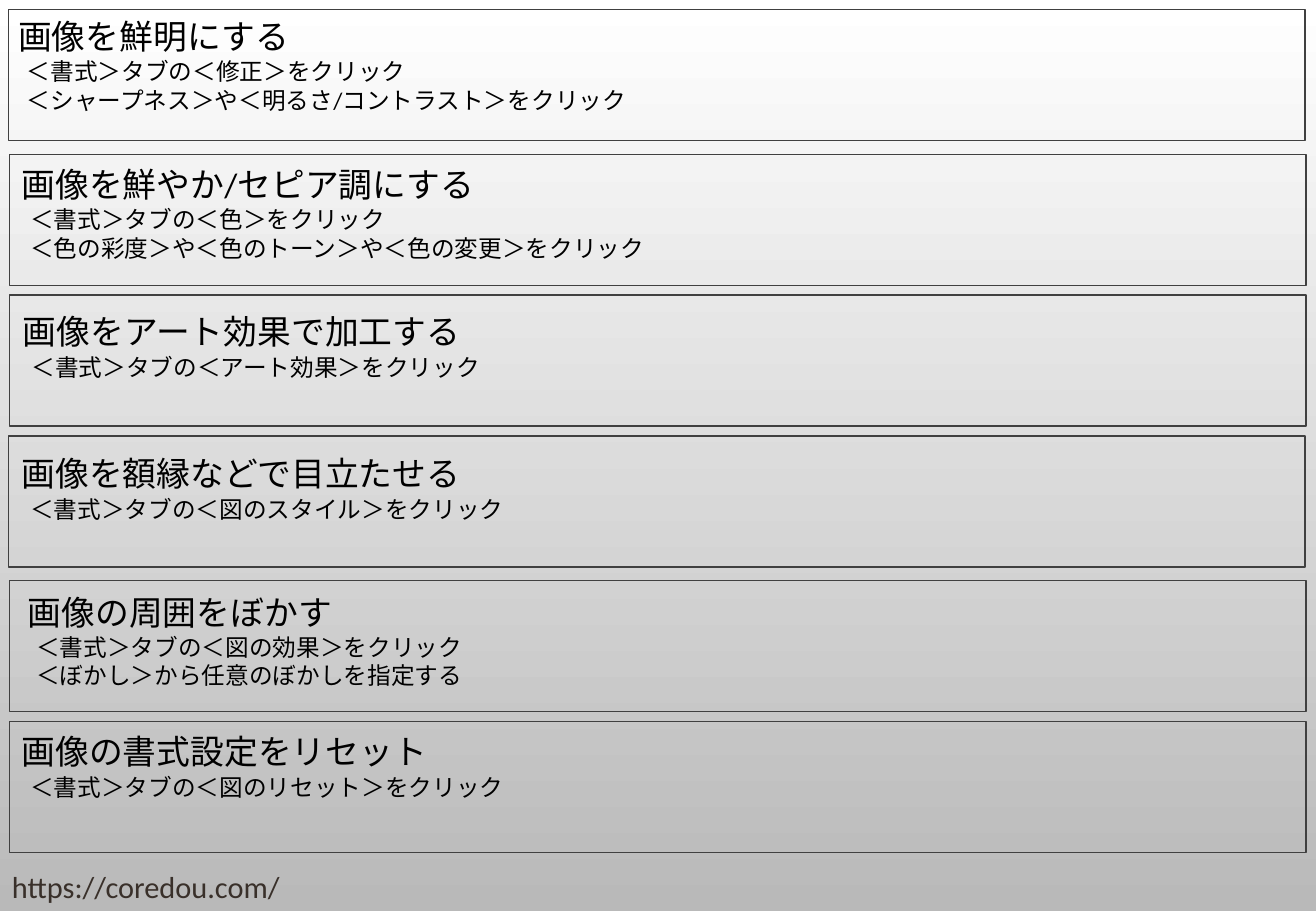
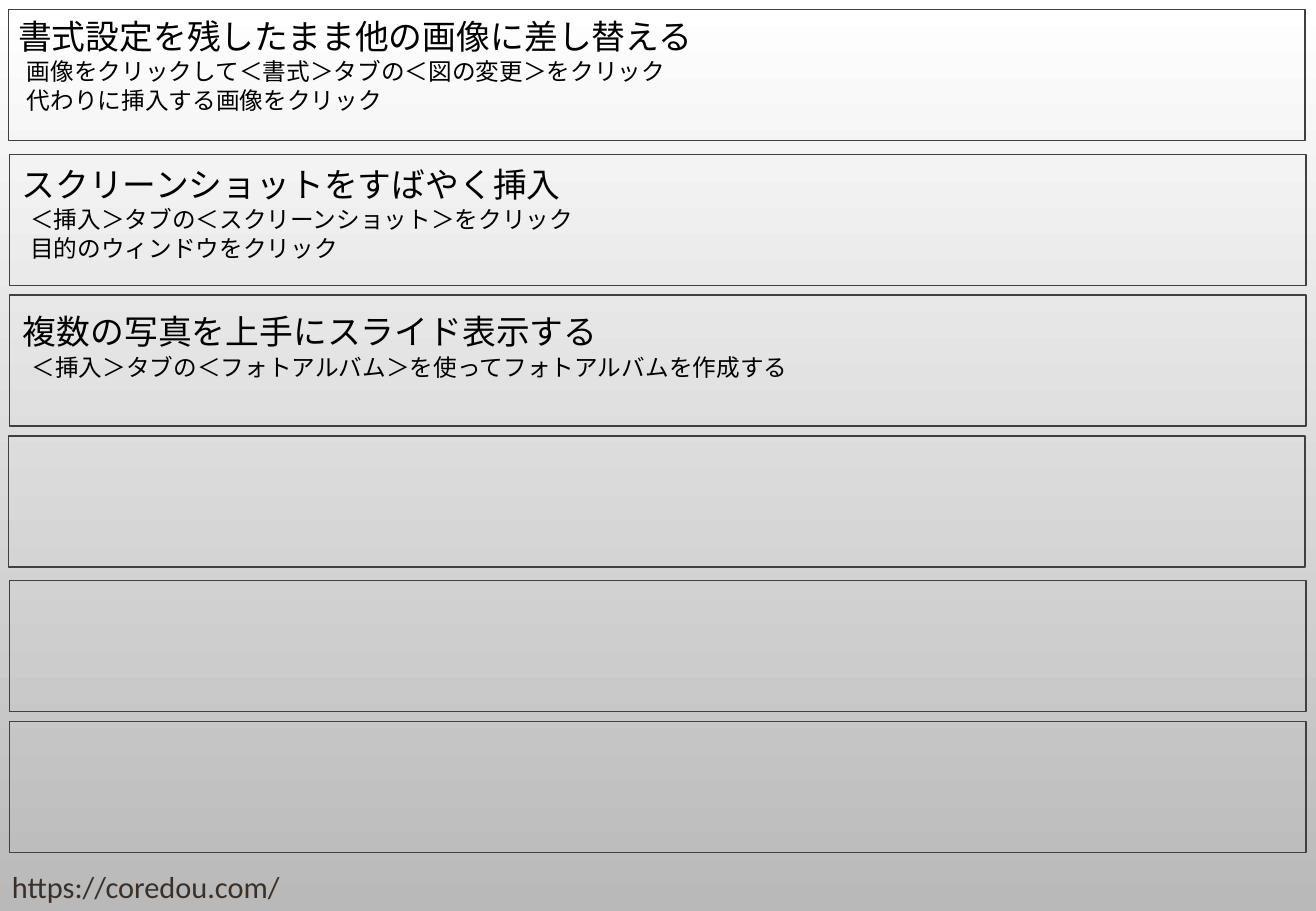
"""Build two slides of image-editing tips set in framed bands."""
from dataclasses import dataclass

from pptx import Presentation
from pptx.dml.color import RGBColor
from pptx.enum.lang import MSO_LANGUAGE_ID
from pptx.enum.shapes import MSO_SHAPE
from pptx.enum.text import MSO_ANCHOR, MSO_AUTO_SIZE
from pptx.util import Cm, Pt


@dataclass(frozen=True)
class Theme:
    font: str = "Calibri"
    ink: str = "000000"
    footer_ink: str = "39302A"
    frame: str = "404040"
    backdrop: tuple = ("FFFFFF", "B9B9B9")
    title_size: int = 20
    detail_size: int = 14
    footer_size: int = 18


BANDS = [(0.18, 0.2), (0.2, 3.23), (0.2, 6.17), (0.18, 9.12), (0.2, 12.14), (0.2, 15.09)]
TITLE_OFFSETS = [(-0.05, 0), (0, 0.07), (0.03, 0.21), (0.02, 0.23), (0.13, 0.1), (0, 0.07)]
BAND_WIDTH, BAND_HEIGHT = 27.1, 2.74
DETAIL_DX, DETAIL_DY = 0.18, 0.87
FOOTER = "https://coredou.com/"

SLIDES = [
    [
        ("画像を鮮明にする",
         ["＜書式＞タブの＜修正＞をクリック",
          "＜シャープネス＞や＜明るさ/コントラスト＞をクリック"]),
        ("画像を鮮やか/セピア調にする",
         ["＜書式＞タブの＜色＞をクリック",
          "＜色の彩度＞や＜色のトーン＞や＜色の変更＞をクリック"]),
        ("画像をアート効果で加工する", ["＜書式＞タブの＜アート効果＞をクリック"]),
        ("画像を額縁などで目立たせる", ["＜書式＞タブの＜図のスタイル＞をクリック"]),
        ("画像の周囲をぼかす",
         ["＜書式＞タブの＜図の効果＞をクリック",
          "＜ぼかし＞から任意のぼかしを指定する"]),
        ("画像の書式設定をリセット", ["＜書式＞タブの＜図のリセット＞をクリック"]),
    ],
    [
        ("書式設定を残したまま他の画像に差し替える",
         ["画像をクリックして＜書式＞タブの＜図の変更＞をクリック",
          "代わりに挿入する画像をクリック"]),
        ("スクリーンショットをすばやく挿入",
         ["＜挿入＞タブの＜スクリーンショット＞をクリック",
          "目的のウィンドウをクリック"]),
        ("複数の写真を上手にスライド表示する",
         ["＜挿入＞タブの＜フォトアルバム＞を使ってフォトアルバムを作成する"]),
    ],
]


def add_run(p, text, *, font, size, color):
    r = p.add_run()
    r.text = text
    r.font.name = font
    r.font.size = Pt(size)
    r.font.color.rgb = RGBColor.from_string(color)
    r.font.language_id = MSO_LANGUAGE_ID.JAPANESE


class Deck:
    def __init__(self, theme):
        self.theme = theme
        self.prs = Presentation()
        self.prs.slide_width, self.prs.slide_height = Cm(27.51), Cm(19.05)
        self.s = None
        fill = self.prs.slide_master.background.fill
        fill.gradient()
        fill.gradient_angle = 270
        for stop, color in zip(fill.gradient_stops, theme.backdrop):
            stop.color.rgb = RGBColor.from_string(color)

    def text(self, lines, left, top, width, height, *, size, color,
             anchor=MSO_ANCHOR.TOP, auto_size=MSO_AUTO_SIZE.SHAPE_TO_FIT_TEXT):
        sp = self.s.shapes.add_textbox(Cm(left), Cm(top), Cm(width), Cm(height))
        tf = sp.text_frame
        tf.word_wrap = True
        tf.auto_size = auto_size
        tf.vertical_anchor = anchor
        for i, line in enumerate(lines):
            p = tf.add_paragraph() if i else tf.paragraphs[0]
            add_run(p, line, font=self.theme.font, size=size, color=color)

    def band(self, left, top):
        sp = self.s.shapes.add_shape(
            MSO_SHAPE.RECTANGLE, Cm(left), Cm(top), Cm(BAND_WIDTH), Cm(BAND_HEIGHT))
        sp.shadow.inherit = False
        sp.fill.background()
        sp.line.color.rgb = RGBColor.from_string(self.theme.frame)
        sp.line.width = Pt(1)

    def footer(self):
        self.text([FOOTER], 0, 18.03, 8.81, 1.02, size=self.theme.footer_size,
                  color=self.theme.footer_ink, anchor=MSO_ANCHOR.MIDDLE,
                  auto_size=MSO_AUTO_SIZE.NONE)

    def tip(self, title, details, left, top):
        self.text([title], left, top, 15.62, 1.11,
                  size=self.theme.title_size, color=self.theme.ink)
        self.text(details, left + DETAIL_DX, top + DETAIL_DY, 18.75,
                  0.26 + 0.6 * len(details),
                  size=self.theme.detail_size, color=self.theme.ink)

    def slide(self, tips):
        self.s = self.prs.slides.add_slide(self.prs.slide_layouts[6])
        self.footer()
        for left, top in BANDS:
            self.band(left, top)
        for (title, details), (left, top), (dx, dy) in zip(tips, BANDS, TITLE_OFFSETS):
            self.tip(title, details, left + dx, top + dy)


def main():
    deck = Deck(Theme())
    for tips in SLIDES:
        deck.slide(tips)
    deck.prs.save("out.pptx")


if __name__ == "__main__":
    main()
